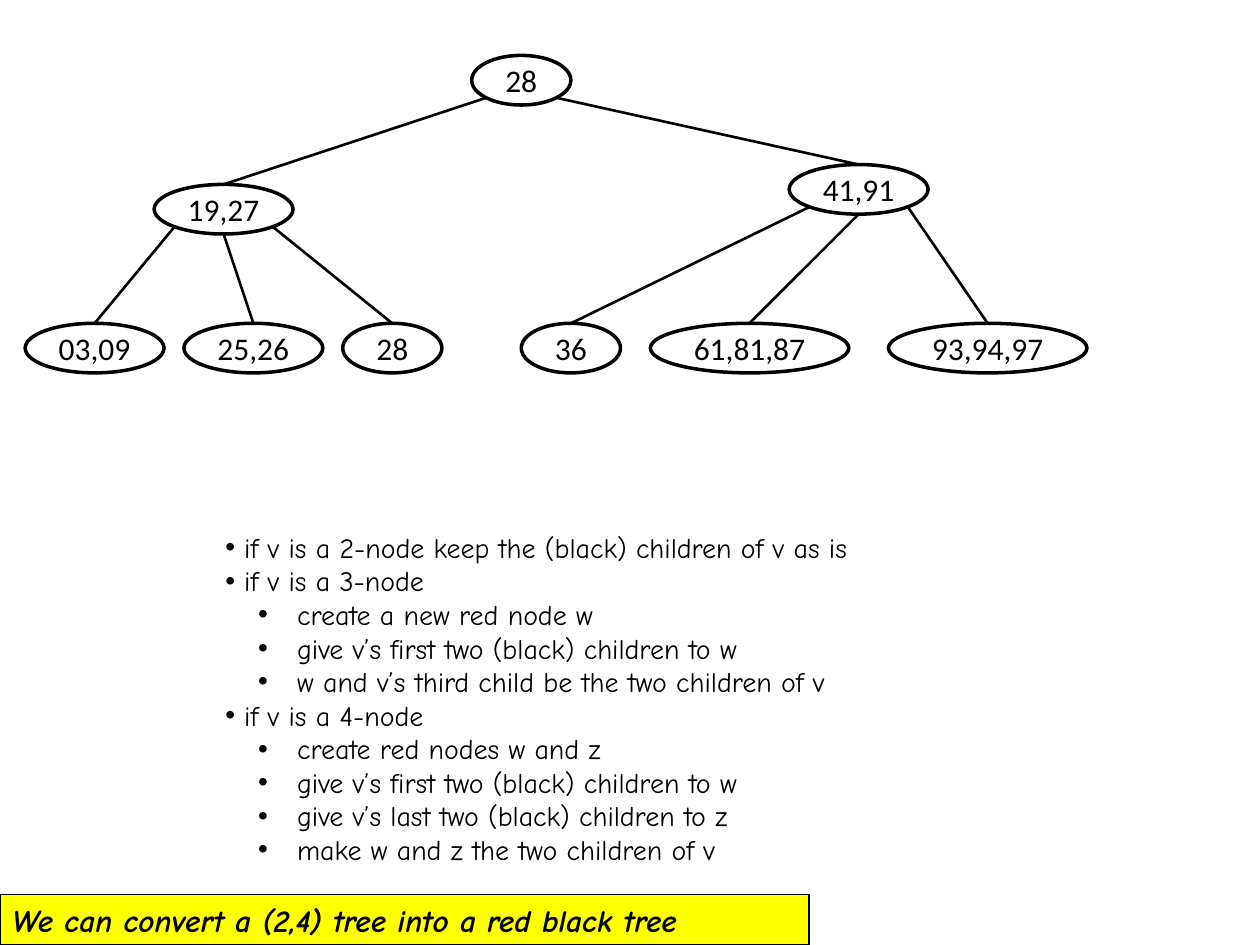
import math

from lxml import etree
from pptx import Presentation, util as u
from pptx.dml.color import RGBColor
from pptx.enum import shapes, text
from pptx.oxml import ns

COLORS = {"ink": "000000", "node": "FFFFFF", "banner": "FFFF00"}
UNIT = 0.1575                    # grid step of the tree, in inches
TREE_LEFT, TREE_TOP = 0.2, 0.44
NODE_ROWS = 2.5

# name: (label, column, row, columns wide)
NODES = {
    "root": ("28", 22.5, 0, 5),
    "left": ("19,27", 6.5, 6.5, 7),
    "right": ("41,91", 38.5, 5.5, 7),
    "left 1": ("03,09", 0, 13.5, 7),
    "left 2": ("25,26", 8, 13.5, 7),
    "left 3": ("28", 16, 13.5, 5),
    "right 1": ("36", 25, 13.5, 5),
    "right 2": ("61,81,87", 31.5, 13.5, 10),
    "right 3": ("93,94,97", 43.5, 13.5, 10),
}
CHILDREN = {
    "root": ["left", "right"],
    "left": ["left 1", "left 2", "left 3"],
    "right": ["right 1", "right 2", "right 3"],
}
# Angles on the parent's outline, measured down from its right end
EXIT_ANGLES = {2: [135, 45], 3: [135, 90, 45]}

RULES = [
    (0, "if v is a 2-node keep the (black) children of v as is"),
    (0, "if v is a 3-node"),
    (1, "create a new red node w"),
    (1, "give v’s first two (black) children to w"),
    (1, "w and v’s third child be the two children of v"),
    (0, "if v is a 4-node"),
    (1, "create red nodes w and z"),
    (1, "give v’s first two (black) children to w"),
    (1, "give v’s last two (black) children to z"),
    (1, "make w and z the two children of v"),
]
INDENTS = [(0.15, -0.15), (0.57, -0.31)]   # left margin, first line


def write(paragraph, words, **font_values):
    run = paragraph.add_run()
    run.text = words
    run.font.color.rgb = RGBColor.from_string(COLORS["ink"])
    for name, value in font_values.items():
        setattr(run.font, name, value)


def outlined(kind, left, top, width, height, fill, line_width):
    shape = slide.shapes.add_shape(
        kind, *(u.Inches(n) for n in (left, top, width, height)))
    shape.shadow.inherit = False
    shape.fill.solid()
    shape.fill.fore_color.rgb = RGBColor.from_string(COLORS[fill])
    shape.line.color.rgb = RGBColor.from_string(COLORS["ink"])
    shape.line.width = u.Pt(line_width)
    shape.text_frame.word_wrap = False
    return shape


presentation = Presentation()
presentation.slide_width = u.Inches(10)
presentation.slide_height = u.Inches(7.5)
slide = presentation.slides.add_slide(presentation.slide_layouts[6])

# Tree nodes
ellipses = {}
for name, (label, column, row, columns) in NODES.items():
    ellipse = outlined(
        shapes.MSO_SHAPE.OVAL, TREE_LEFT + column * UNIT, TREE_TOP + row * UNIT,
        columns * UNIT, NODE_ROWS * UNIT, "node", 2)
    paragraph = ellipse.text_frame.paragraphs[0]
    paragraph.alignment = text.PP_ALIGN.CENTER
    write(paragraph, label, name="Calibri", size=u.Pt(18))
    ellipses[name] = ellipse

# Tree edges, from the parent's lower outline to the top of each child
for parent_name, child_names in CHILDREN.items():
    parent = ellipses[parent_name]
    for angle, child_name in zip(EXIT_ANGLES[len(child_names)], child_names):
        turn = math.radians(angle)
        x = parent.left + parent.width / 2 * (1 + math.cos(turn))
        y = parent.top + parent.height / 2 * (1 + math.sin(turn))
        edge = slide.shapes.add_connector(
            shapes.MSO_CONNECTOR.STRAIGHT, int(x), int(y), int(x), int(y))
        edge.end_connect(ellipses[child_name], 0)
        edge.line.color.rgb = RGBColor.from_string(COLORS["ink"])
        edge.line.width = u.Pt(1.5)
        etree.SubElement(edge._element.spPr, ns.qn("a:effectLst"))

# Banner along the bottom edge
banner = outlined(shapes.MSO_SHAPE.RECTANGLE, 0, 7.1, 6.42, 0.4, "banner", 0.75)
paragraph = banner.text_frame.paragraphs[0]
paragraph.alignment = text.PP_ALIGN.LEFT
write(paragraph, "We can convert a (2,4) tree into a red black tree",
      name="Comic Neue", size=u.Pt(18), bold=True, italic=True)

# Conversion rules
rules_box = slide.shapes.add_textbox(
    u.Inches(1.69), u.Inches(4.16), u.Inches(5.6), u.Inches(2.83))
frame = rules_box.text_frame
frame.word_wrap = True
for number, (level, words) in enumerate(RULES):
    paragraph = frame.add_paragraph() if number else frame.paragraphs[0]
    paragraph.level = level
    write(paragraph, words, name="Comic Neue", size=u.Pt(16))
    properties = paragraph._p.get_or_add_pPr()
    for key, inches in zip(("marL", "indent"), INDENTS[level]):
        properties.set(key, str(u.Inches(inches)))
    etree.SubElement(properties, ns.qn("a:buFont"), typeface="Arial")
    etree.SubElement(properties, ns.qn("a:buChar"), char="•")

presentation.save("out.pptx")
